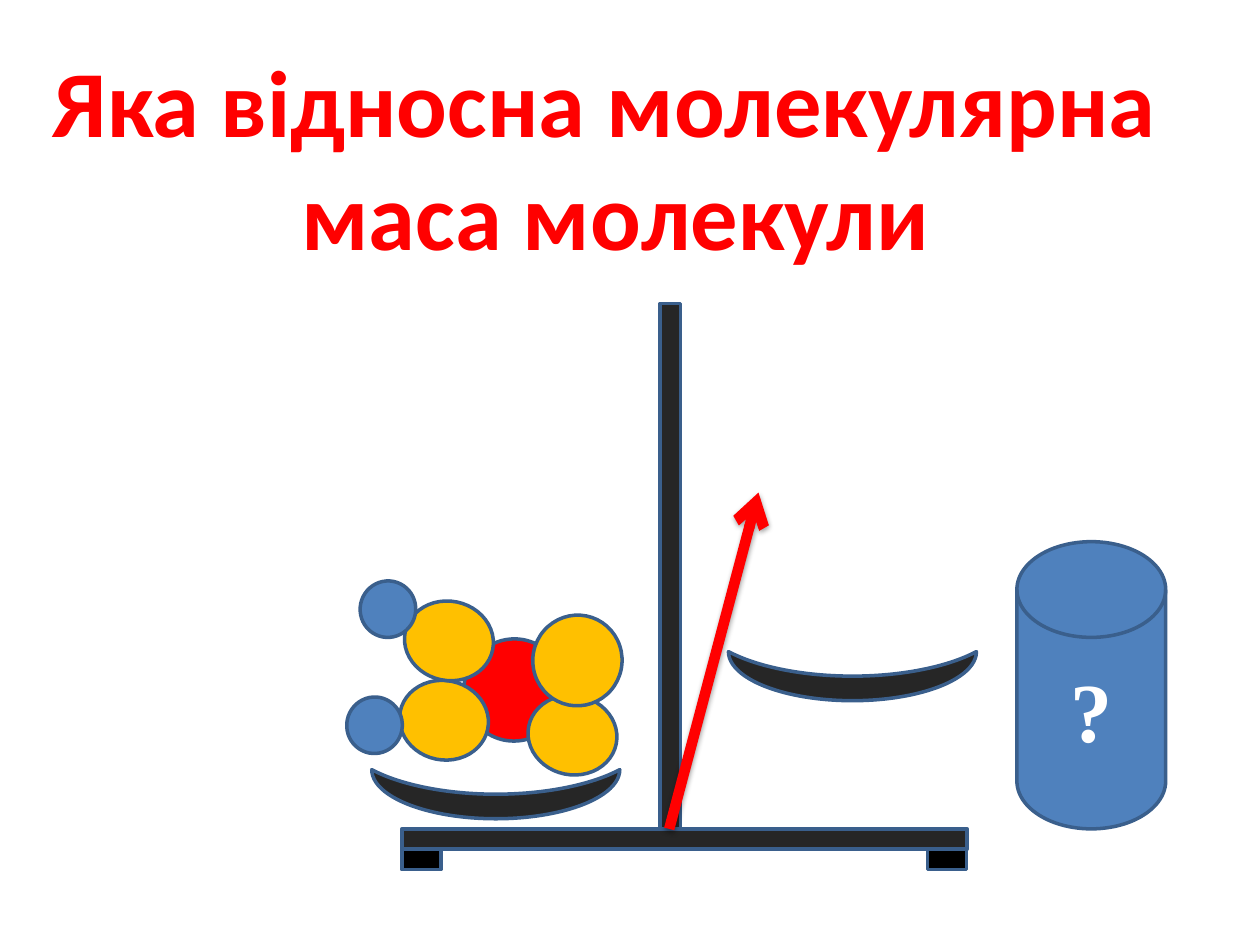
"""Build a slide with a balance scale weighing a molecule against an unknown mass."""
from dataclasses import dataclass

from lxml import etree
from pptx import Presentation
from pptx.dml.color import RGBColor
from pptx.enum.shapes import MSO_CONNECTOR, MSO_SHAPE
from pptx.enum.text import MSO_ANCHOR, MSO_AUTO_SIZE, PP_ALIGN
from pptx.oxml import parse_xml
from pptx.oxml.ns import nsdecls, qn
from pptx.shapes.autoshape import Shape
from pptx.slide import Slide
from pptx.text.text import TextFrame
from pptx.util import Cm, Pt

RECTANGLE = MSO_SHAPE.RECTANGLE
OVAL = MSO_SHAPE.OVAL
MOON = MSO_SHAPE.MOON
CYLINDER = MSO_SHAPE.FLOWCHART_MAGNETIC_DISK
STRAIGHT = MSO_CONNECTOR.STRAIGHT
CENTER = PP_ALIGN.CENTER
MIDDLE = MSO_ANCHOR.MIDDLE
FIT_SHAPE = MSO_AUTO_SIZE.SHAPE_TO_FIT_TEXT

COLORS = {
    "red": "FF0000",
    "orange": "FFC000",
    "blue": "4F81BD",
    "outline": "3A5F8C",
    "charcoal": "262626",
    "black": "000000",
    "white": "FFFFFF",
}
TITLE_LINES = ("Яка відносна молекулярна ", "маса молекули")
MOLECULE_ROTATION = 11.4


@dataclass(frozen=True)
class Part:
    """A filled, outlined shape with lengths in centimetres."""

    kind: MSO_SHAPE
    left: float
    top: float
    width: float
    height: float
    color: str
    rotation: float = 0


def atom(left: float, top: float, width: float, height: float, color: str) -> Part:
    """Describe one atom of the molecule."""
    return Part(OVAL, left, top, width, height, color, MOLECULE_ROTATION)


def pan(left: float, top: float) -> Part:
    """Describe a scale pan as a moon lying on its back."""
    return Part(MOON, left, top, 0.99, 5, "charcoal", 270)


STAND = (
    Part(RECTANGLE, 8.1, 16.71, 11.4, 0.41, "charcoal"),
    Part(RECTANGLE, 8.1, 17.12, 0.79, 0.41, "black"),
    Part(RECTANGLE, 18.7, 17.12, 0.79, 0.41, "black"),
    Part(RECTANGLE, 13.31, 6.12, 0.41, 10.59, "charcoal"),
)
UNKNOWN_MASS = Part(CYLINDER, 20.5, 10.92, 3, 5.79, "blue")
PANS = (pan(16.69, 11.13), pan(9.5, 13.51))
MOLECULE = (
    atom(9.35, 12.88, 2.03, 2.06, "red"),
    atom(8.05, 13.72, 1.8, 1.6, "orange"),
    atom(8.15, 12.12, 1.8, 1.6, "orange"),
    atom(10.64, 14.02, 1.8, 1.6, "orange"),
    atom(10.74, 12.4, 1.8, 1.83, "orange"),
    atom(7.26, 11.71, 1.12, 1.14, "blue"),
    atom(6.99, 14.05, 1.12, 1.14, "blue"),
)


def rgb(name: str) -> RGBColor:
    """Look up a palette colour."""
    return RGBColor.from_string(COLORS[name])


def draw_part(shapes, part: Part) -> Shape:
    """Draw a part into a slide's or a group's shapes."""
    shape = shapes.add_shape(
        part.kind, Cm(part.left), Cm(part.top), Cm(part.width), Cm(part.height)
    )
    shape.rotation = part.rotation
    shape.shadow.inherit = False
    shape.fill.solid()
    shape.fill.fore_color.rgb = rgb(part.color)
    shape.line.color.rgb = rgb("outline")
    shape.line.width = Pt(2)
    return shape


def format_text(text_frame: TextFrame, font_name: str, size: float, color: str) -> None:
    """Centre every paragraph and set its runs in bold."""
    for paragraph in text_frame.paragraphs:
        paragraph.alignment = CENTER
        for run in paragraph.runs:
            run.font.name = font_name
            run.font.size = Pt(size)
            run.font.bold = True
            run.font.color.rgb = rgb(color)


def draw_pointer(slide: Slide) -> None:
    """Draw the red pointer with its arrowhead and soft shadow."""
    pointer = slide.shapes.add_connector(
        STRAIGHT, Cm(13.49), Cm(16.71), Cm(15.29), Cm(9.93)
    )
    pointer.line.color.rgb = rgb("red")
    pointer.line.width = Pt(6)
    etree.SubElement(pointer.line._get_or_add_ln(), qn("a:tailEnd"), type="arrow")
    pointer._element.spPr.append(parse_xml(
        f'<a:effectLst {nsdecls("a")}>'
        '<a:outerShdw blurRad="40000" dist="20000" dir="5400000" rotWithShape="0">'
        f'<a:srgbClr val="{COLORS["black"]}"><a:alpha val="38000"/></a:srgbClr>'
        "</a:outerShdw></a:effectLst>"
    ))


def draw_title(slide: Slide) -> None:
    """Draw the two-line question."""
    title = slide.shapes.add_textbox(Cm(0.71), Cm(0.74), Cm(23.39), Cm(4.88))
    text_frame = title.text_frame
    text_frame.word_wrap = False
    text_frame.auto_size = FIT_SHAPE
    text_frame.text = "\n".join(TITLE_LINES)
    format_text(text_frame, "Calibri", 54, "red")


def main() -> None:
    """Assemble and save the slide."""
    presentation = Presentation()
    presentation.slide_width = Cm(25.4)
    presentation.slide_height = Cm(19.05)
    slide = presentation.slides.add_slide(presentation.slide_layouts[6])

    for part in STAND:
        draw_part(slide.shapes, part)
    draw_pointer(slide)

    cylinder = draw_part(slide.shapes, UNKNOWN_MASS)
    cylinder.text_frame.text = "?"
    cylinder.text_frame.vertical_anchor = MIDDLE
    format_text(cylinder.text_frame, "Times New Roman", 48, "white")

    for part in PANS:
        draw_part(slide.shapes, part)
    molecule = slide.shapes.add_group_shape()
    for part in MOLECULE:
        draw_part(molecule.shapes, part)

    draw_title(slide)
    presentation.save("out.pptx")


if __name__ == "__main__":
    main()
